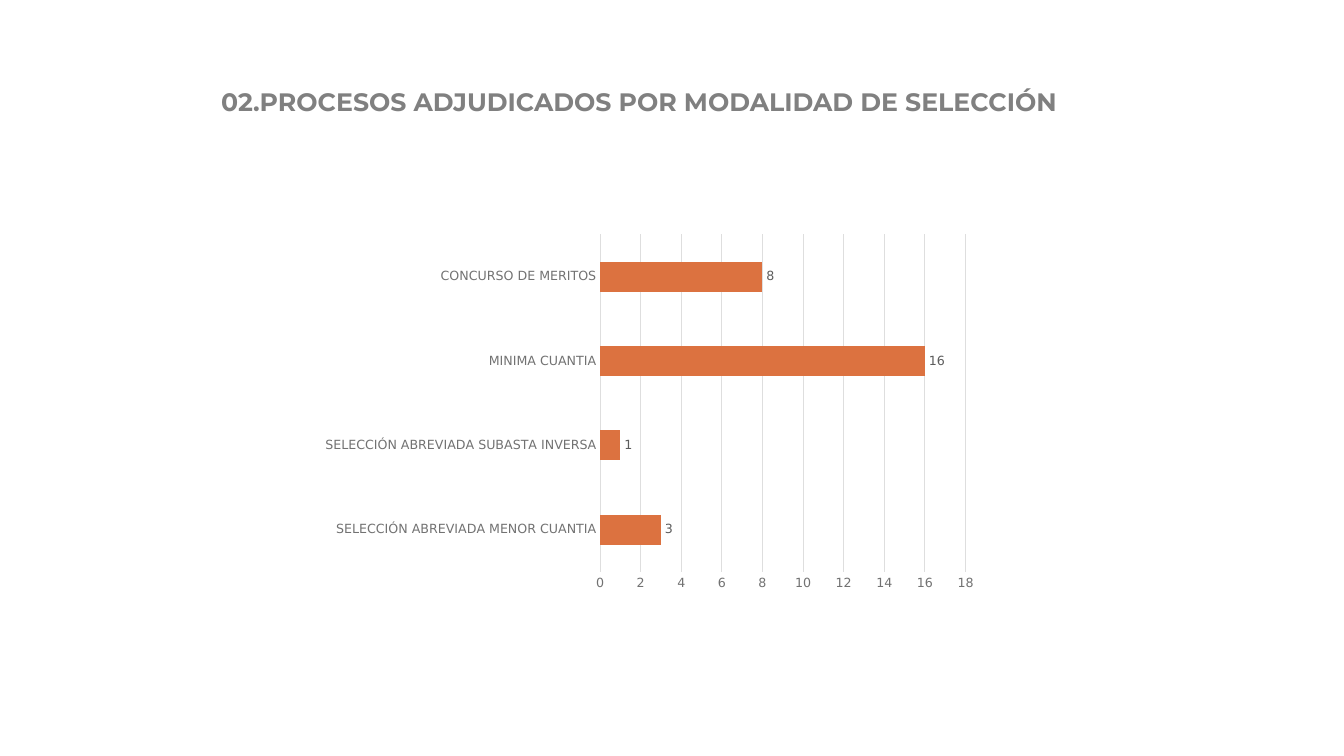
"""Build the slide of awarded processes by selection method."""
from lxml import etree
from pptx import Presentation
from pptx.chart.data import CategoryChartData
from pptx.dml.color import RGBColor
from pptx.enum.chart import XL_CHART_TYPE as ChartType
from pptx.enum.chart import XL_LABEL_POSITION as LabelPosition
from pptx.enum.chart import XL_TICK_MARK as TickMark
from pptx.enum.text import MSO_ANCHOR, MSO_AUTO_SIZE, PP_ALIGN
from pptx.oxml.ns import qn
from pptx.util import Emu, Pt

PX_PER_INCH = 100.8
TITLE_GREY = RGBColor(0x80, 0x80, 0x80)
AXIS_GREY = RGBColor(0x72, 0x72, 0x72)
GRID_GREY = RGBColor(0xDE, 0xDE, 0xDE)
LABEL_GREY = RGBColor(0x5C, 0x5C, 0x5C)
CHART_TEXT = RGBColor(0x26, 0x26, 0x26)
BAR_ORANGE = RGBColor(0xDC, 0x72, 0x40)
TITLE_FONT = "Montserrat"
CHART_FONT = "DejaVu Sans"
PROCESSES = {
    "SELECCIÓN ABREVIADA MENOR CUANTIA": 3,
    "SELECCIÓN ABREVIADA SUBASTA INVERSA": 1,
    "MINIMA CUANTIA": 16,
    "CONCURSO DE MERITOS": 8,
}
PLOT_SHARE = {"x": 0.43, "y": 0.02, "w": 0.54, "h": 0.91}


def px(length):
    return Emu(round(length * 914400 / PX_PER_INCH))


def style_font(font, name, size, color, bold=False):
    font.name = name
    font.size = Pt(size)
    font.bold = bold
    font.color.rgb = color


def style_line(line, color):
    line.color.rgb = color
    line.width = Pt(0.75)


def set_title(slide, wording, left, top, width, height):
    title = slide.shapes.title
    title.left, title.top = px(left), px(top)
    title.width, title.height = px(width), px(height)
    frame = title.text_frame
    frame.text = wording
    frame.word_wrap = True
    frame.auto_size = MSO_AUTO_SIZE.SHAPE_TO_FIT_TEXT
    frame.vertical_anchor = MSO_ANCHOR.TOP
    heading = frame.paragraphs[0]
    heading.alignment = PP_ALIGN.LEFT
    style_font(heading.runs[0].font, TITLE_FONT, 18, TITLE_GREY, bold=True)


def place_plot(chart):
    plot_area = chart.plots[0]._element.getparent()
    layout = plot_area.find(qn("c:layout"))
    if layout is None:
        layout = etree.Element(qn("c:layout"))
        plot_area.insert(0, layout)
    manual = etree.SubElement(layout, qn("c:manualLayout"))
    settings = {"layoutTarget": "inner", "xMode": "edge", "yMode": "edge", **PLOT_SHARE}
    for tag, setting in settings.items():
        etree.SubElement(manual, qn(f"c:{tag}")).set("val", str(setting))


def style_axes(chart):
    methods, counts = chart.category_axis, chart.value_axis
    for axis in (methods, counts):
        axis.major_tick_mark = axis.minor_tick_mark = TickMark.NONE
        style_font(axis.tick_labels.font, CHART_FONT, 9, AXIS_GREY)
    style_line(methods.format.line, GRID_GREY)
    counts.format.line.fill.background()
    counts.minimum_scale, counts.maximum_scale, counts.major_unit = 0, 18, 2
    style_line(counts.major_gridlines.format.line, GRID_GREY)


def style_bars(plot):
    plot.gap_width = 182
    plot.vary_by_categories = False
    bars = plot.series[0]
    bars.format.fill.solid()
    bars.format.fill.fore_color.rgb = BAR_ORANGE
    labels = bars.data_labels
    labels.show_value = True
    labels.position = LabelPosition.OUTSIDE_END
    style_font(labels.font, CHART_FONT, 9, LABEL_GREY)


def add_bar_chart(slide, processes, left, top, width, height):
    figures = CategoryChartData()
    figures.categories = list(processes)
    figures.add_series("Series 1", list(processes.values()))
    chart = slide.shapes.add_chart(
        ChartType.BAR_CLUSTERED, px(left), px(top), px(width), px(height), figures
    ).chart
    chart.has_legend = False
    chart.has_title = False
    style_font(chart.font, CHART_FONT, 10, CHART_TEXT)
    style_axes(chart)
    style_bars(chart.plots[0])
    place_plot(chart)


def main():
    deck = Presentation()
    deck.slide_width, deck.slide_height = px(1344), px(756)
    slide = deck.slides.add_slide(deck.slide_layouts[5])
    set_title(slide, "02.PROCESOS ADJUDICADOS POR MODALIDAD DE SELECCIÓN", 211, 81, 891, 40)
    add_bar_chart(slide, PROCESSES, 309, 227, 677, 371)
    deck.save("out.pptx")


if __name__ == "__main__":
    main()
